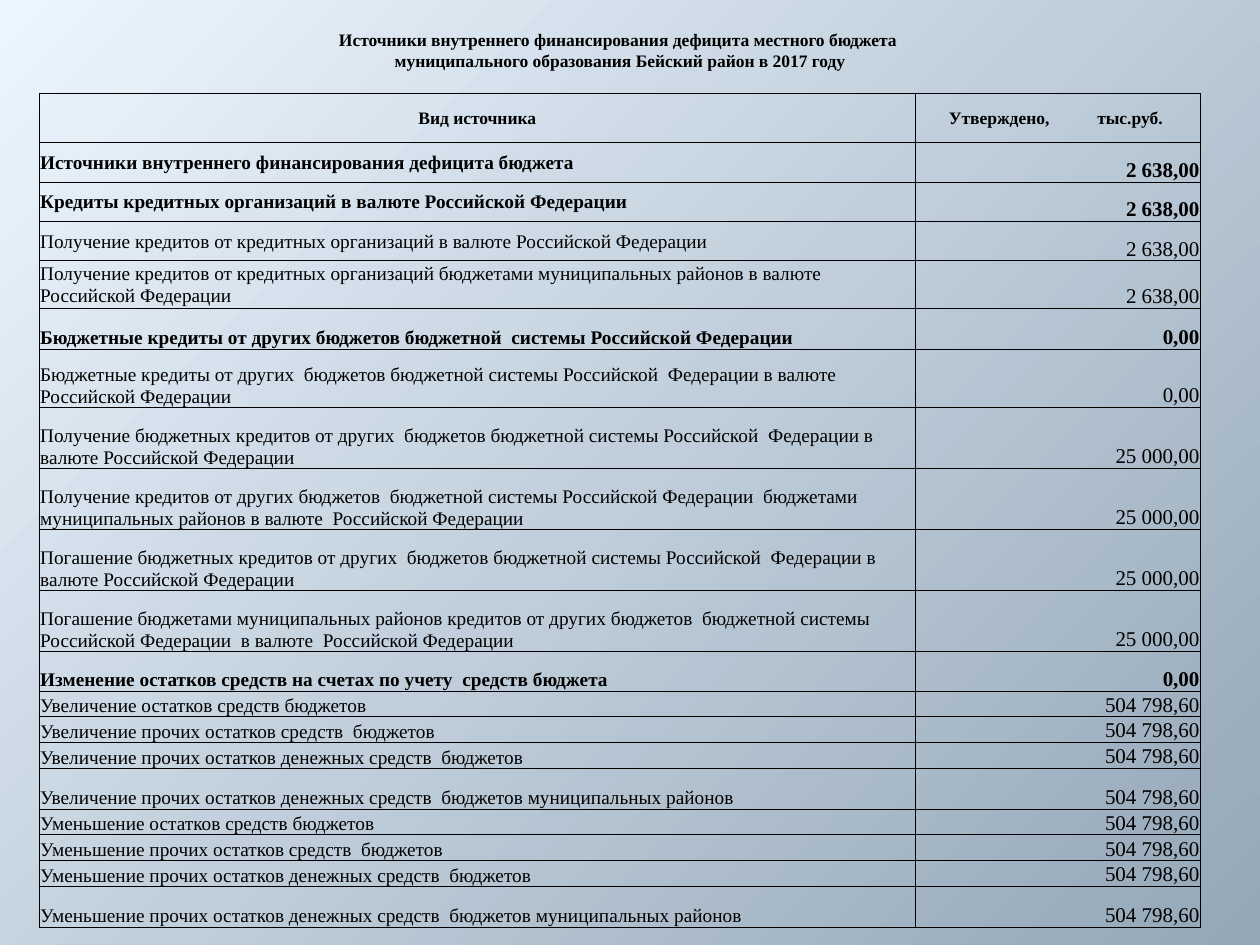
from dataclasses import dataclass

from lxml.etree import SubElement
from pptx import Presentation
from pptx.dml.color import RGBColor
from pptx.enum.text import MSO_ANCHOR, PP_ALIGN
from pptx.oxml.ns import qn
from pptx.util import Cm, Pt


@dataclass(frozen=True)
class Theme:
    font: str = "Times New Roman"
    ink: str = "000000"
    light: str = "ECF6FF"
    dark: str = "94A7B7"
    heading_size: float = 10
    source_size: float = 11
    amount_size: float = 12
    border: float = 0.5


THEME = Theme()
BOTTOM, MIDDLE = MSO_ANCHOR.BOTTOM, MSO_ANCHOR.MIDDLE
COLUMN_WIDTHS = (17.66, 5.75)
TITLE_HEIGHT, HEADER_HEIGHT = 0.43, 0.99

TITLE = (
    "Источники внутреннего финансирования дефицита местного бюджета ",
    "муниципального образования Бейский район в 2017 году",
)
HEADER = ("Вид источника", "Утверждено,           тыс.руб. ")

# Source, amount, row height in cm, bold, anchor of the source name
SOURCES = (
    ("Источники внутреннего финансирования дефицита бюджета",
     "2 638,00", 0.79, True, MIDDLE),
    ("Кредиты кредитных организаций в валюте Российской Федерации",
     "2 638,00", 0.79, True, MIDDLE),
    ("Получение кредитов от кредитных организаций в валюте Российской Федерации",
     "2 638,00", 0.8, False, MIDDLE),
    ("Получение кредитов от кредитных организаций бюджетами муниципальных районов "
     "в валюте Российской Федерации",
     "2 638,00", 0.95, False, MIDDLE),
    ("Бюджетные кредиты от других бюджетов бюджетной  системы Российской Федерации",
     "0,00", 0.83, True, BOTTOM),
    ("Бюджетные кредиты от других  бюджетов бюджетной системы Российской  Федерации "
     "в валюте Российской Федерации",
     "0,00", 1.17, False, BOTTOM),
    ("Получение бюджетных кредитов от других  бюджетов бюджетной системы "
     "Российской  Федерации в валюте Российской Федерации",
     "25 000,00", 1.23, False, BOTTOM),
    ("Получение кредитов от других бюджетов  бюджетной системы Российской Федерации  "
     "бюджетами муниципальных районов в валюте  Российской Федерации",
     "25 000,00", 1.23, False, BOTTOM),
    ("Погашение бюджетных кредитов от других  бюджетов бюджетной системы "
     "Российской  Федерации в валюте Российской Федерации",
     "25 000,00", 1.23, False, BOTTOM),
    ("Погашение бюджетами муниципальных районов кредитов от других бюджетов  "
     "бюджетной системы Российской Федерации  в валюте  Российской Федерации",
     "25 000,00", 1.23, False, BOTTOM),
    ("Изменение остатков средств на счетах по учету  средств бюджета",
     "0,00", 0.8, True, BOTTOM),
) + tuple(
    (f"{change} {balance}", "504 798,60", height, False, BOTTOM)
    for change in ("Увеличение", "Уменьшение")
    for balance, height in (
        ("остатков средств бюджетов", 0.52),
        ("прочих остатков средств  бюджетов", 0.52),
        ("прочих остатков денежных средств  бюджетов", 0.52),
        ("прочих остатков денежных средств  бюджетов муниципальных районов", 0.82),
    )
)


def paint_background(slide):
    fill = slide.background.fill
    fill.gradient()
    fill.gradient_angle = 315
    for stop, color, position in zip(
            fill.gradient_stops, (THEME.light, THEME.dark), (0, 1)):
        stop.color.rgb = RGBColor.from_string(color)
        stop.position = position


def set_borders(cell, ruled):
    """Rule the sides in `ruled` (letters of LRTB) and clear the others."""
    properties = cell._tc.get_or_add_tcPr()
    for side in "LRTB":
        line = SubElement(properties, qn(f"a:ln{side}"), w=str(Pt(THEME.border)))
        if side in ruled:
            fill = SubElement(line, qn("a:solidFill"))
            SubElement(fill, qn("a:srgbClr"), val=THEME.ink)
        else:
            SubElement(line, qn("a:noFill"))


def prepare_cell(cell, ruled):
    set_borders(cell, ruled)
    cell.fill.background()
    cell.margin_left = cell.margin_right = cell.margin_top = Cm(0.02)
    cell.margin_bottom = 0


def write_cell(cell, text, size, bold, align, anchor):
    cell.vertical_anchor = anchor
    paragraph = cell.text_frame.paragraphs[0]
    paragraph.text = text
    paragraph.alignment = align
    for run in paragraph.runs:
        run.font.name = THEME.font
        run.font.size = Pt(size)
        run.font.bold = bold
        run.font.color.rgb = RGBColor.from_string(THEME.ink)


def write_heading(cell, text, anchor):
    write_cell(cell, text, THEME.heading_size, True, PP_ALIGN.CENTER, anchor)


def keep_empty_row_low(cell):
    """Give the empty paragraph the heading size so that its row does not grow."""
    SubElement(cell.text_frame.paragraphs[0]._p, qn("a:endParaRPr"),
               sz=str(int(THEME.heading_size * 100)))


def add_budget_table(slide):
    spacer = len(TITLE)
    header = spacer + 1
    heights = [TITLE_HEIGHT] * header + [HEADER_HEIGHT] + [row[2] for row in SOURCES]
    table = slide.shapes.add_table(
        len(heights), len(COLUMN_WIDTHS), Cm(0.79), Cm(0.58),
        Cm(sum(COLUMN_WIDTHS)), Cm(sum(heights))).table
    table.first_row = table.horz_banding = False

    for column, width in zip(table.columns, COLUMN_WIDTHS):
        column.width = Cm(width)
    for index, (row, height) in enumerate(zip(table.rows, heights)):
        row.height = Cm(height)
        ruled = "LRTB" if index >= header else "B" if index == spacer else ""
        for cell in row.cells:
            prepare_cell(cell, ruled)

    for index, line in enumerate(TITLE):
        table.cell(index, 0).merge(table.cell(index, 1))
        write_heading(table.cell(index, 0), line, BOTTOM)
        keep_empty_row_low(table.cell(index, 1))
    for column, caption in enumerate(HEADER):
        keep_empty_row_low(table.cell(spacer, column))
        write_heading(table.cell(header, column), caption, MIDDLE)
    for index, (source, amount, _, bold, anchor) in enumerate(SOURCES, header + 1):
        write_cell(table.cell(index, 0), source, THEME.source_size, bold,
                   PP_ALIGN.LEFT, anchor)
        write_cell(table.cell(index, 1), amount, THEME.amount_size, bold,
                   PP_ALIGN.RIGHT, BOTTOM)


def main():
    presentation = Presentation()
    presentation.slide_width = Cm(25.4)
    presentation.slide_height = Cm(19.05)
    slide = presentation.slides.add_slide(presentation.slide_layouts[6])
    paint_background(slide)
    add_budget_table(slide)
    presentation.save("out.pptx")


if __name__ == "__main__":
    main()
